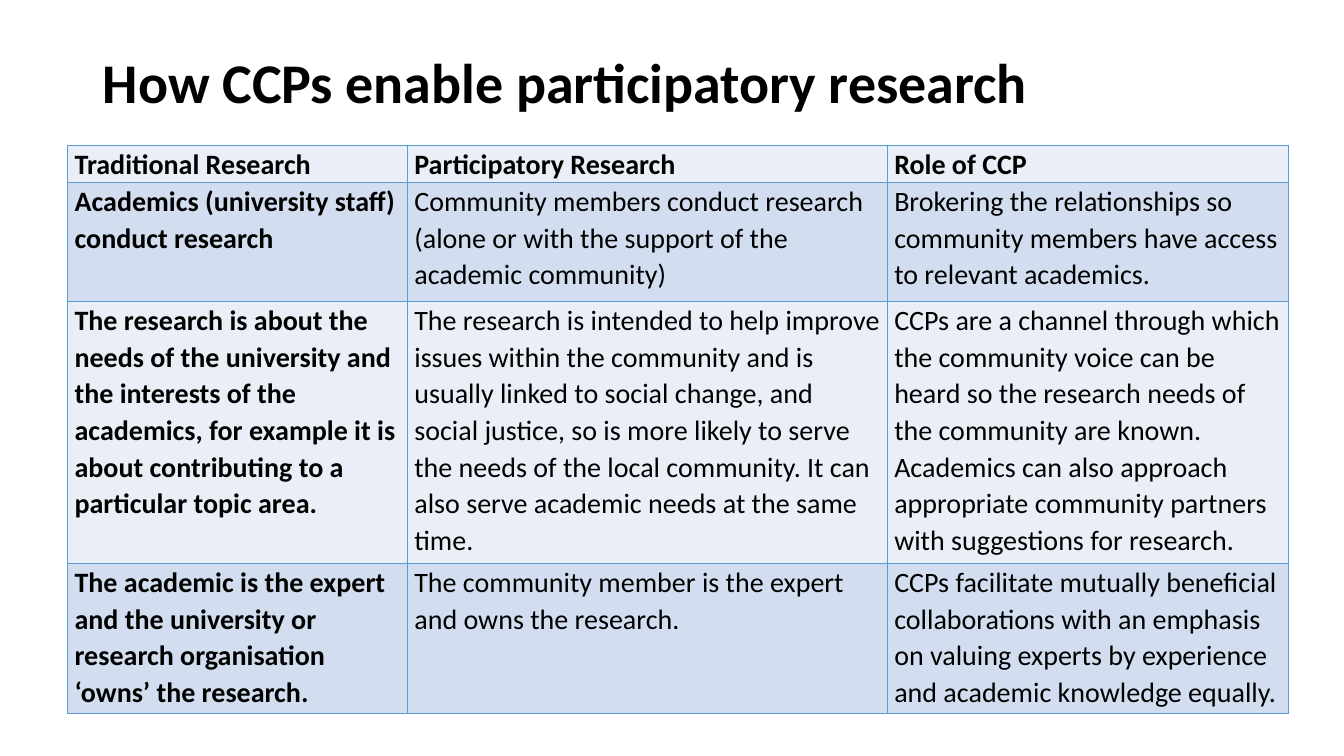
from typing import NamedTuple

from lxml import etree
from pptx import Presentation
from pptx import util as u
from pptx.dml.color import RGBColor
from pptx.enum import text
from pptx.oxml import ns

FONT = "Calibri"
BLACK = "000000"
BORDER = "5B9BD5"
BANDS = ("EAEFF7", "D2DEEF")
COLUMN_WIDTHS = (3.37, 4.76, 3.98)


class Row(NamedTuple):
    height: float
    traditional: str
    participatory: str
    role: str


ROWS = (
    Row(0.37, "Traditional Research", "Participatory Research", "Role of CCP"),
    Row(1.18, "Academics (university staff) conduct research",
        "Community members conduct research (alone or with the support of the "
        "academic community)",
        "Brokering the relationships so community members have access to "
        "relevant academics."),
    Row(2.6, "The research is about the needs of the university and the "
        "interests of the academics, for example it is about contributing to a "
        "particular topic area.",
        "The research is intended to help improve issues within the community "
        "and is usually linked to social change, and social justice, so is more "
        "likely to serve the needs of the local community. It can also serve "
        "academic needs at the same time.",
        "CCPs are a channel through which the community voice can be heard so "
        "the research needs of the community are known. Academics can also "
        "approach appropriate community partners with suggestions for research."),
    Row(1.49, "The academic is the expert and the university or research "
        "organisation ‘owns’ the research.",
        "The community member is the expert and owns the research.",
        "CCPs facilitate mutually beneficial collaborations with an emphasis on "
        "valuing experts by experience and academic knowledge equally."),
)


def rgb(value: str) -> RGBColor:
    return RGBColor.from_string(value)


def write(tf, content: str, *, size: float, bold: bool, spacing: float) -> None:
    p = tf.paragraphs[0]
    p.alignment = text.PP_ALIGN.LEFT
    p.line_spacing = spacing
    r = p.add_run()
    r.text = content
    r.font.name = FONT
    r.font.size = u.Pt(size)
    r.font.bold = bold
    r.font.color.rgb = rgb(BLACK)


def add_borders(cell) -> None:
    """Draw all four edges; call before filling, as the schema puts lines first."""
    properties = cell._tc.get_or_add_tcPr()
    for edge in ("lnL", "lnR", "lnT", "lnB"):
        line = etree.SubElement(properties, ns.qn(f"a:{edge}"), w=str(u.Pt(1)))
        fill = etree.SubElement(line, ns.qn("a:solidFill"))
        etree.SubElement(fill, ns.qn("a:srgbClr"), val=BORDER)


def format_cell(cell, content: str, *, fill: str, bold: bool) -> None:
    cell.margin_left = cell.margin_right = u.Inches(0.07)
    cell.margin_top = cell.margin_bottom = 0
    add_borders(cell)
    cell.fill.solid()
    cell.fill.fore_color.rgb = rgb(fill)
    write(cell.text_frame, content, size=20, bold=bold, spacing=1.07)


def add_title(s) -> None:
    sp = s.shapes.title
    sp.left, sp.top = u.Inches(0.92), u.Inches(0.4)
    sp.width, sp.height = u.Inches(11.5), u.Inches(0.89)
    tf = sp.text_frame
    tf.vertical_anchor = text.MSO_ANCHOR.MIDDLE
    write(tf, "How CCPs enable participatory research",
          size=40, bold=True, spacing=0.9)


def add_comparison(s) -> None:
    table = s.shapes.add_table(
        len(ROWS), len(COLUMN_WIDTHS), u.Inches(0.67), u.Inches(1.44),
        u.Inches(sum(COLUMN_WIDTHS)), u.Inches(sum(row.height for row in ROWS)),
    ).table
    for column, width in zip(table.columns, COLUMN_WIDTHS):
        column.width = u.Inches(width)
    for i, (height, *contents) in enumerate(ROWS):
        table.rows[i].height = u.Inches(height)
        for j, content in enumerate(contents):
            format_cell(table.cell(i, j), content, fill=BANDS[i % 2],
                        bold=i == 0 or j == 0)


def main() -> None:
    prs = Presentation()
    prs.slide_width, prs.slide_height = u.Inches(13.33), u.Inches(7.5)
    s = prs.slides.add_slide(prs.slide_layouts.get_by_name("Title Only"))
    add_title(s)
    add_comparison(s)
    prs.save("out.pptx")


if __name__ == "__main__":
    main()
